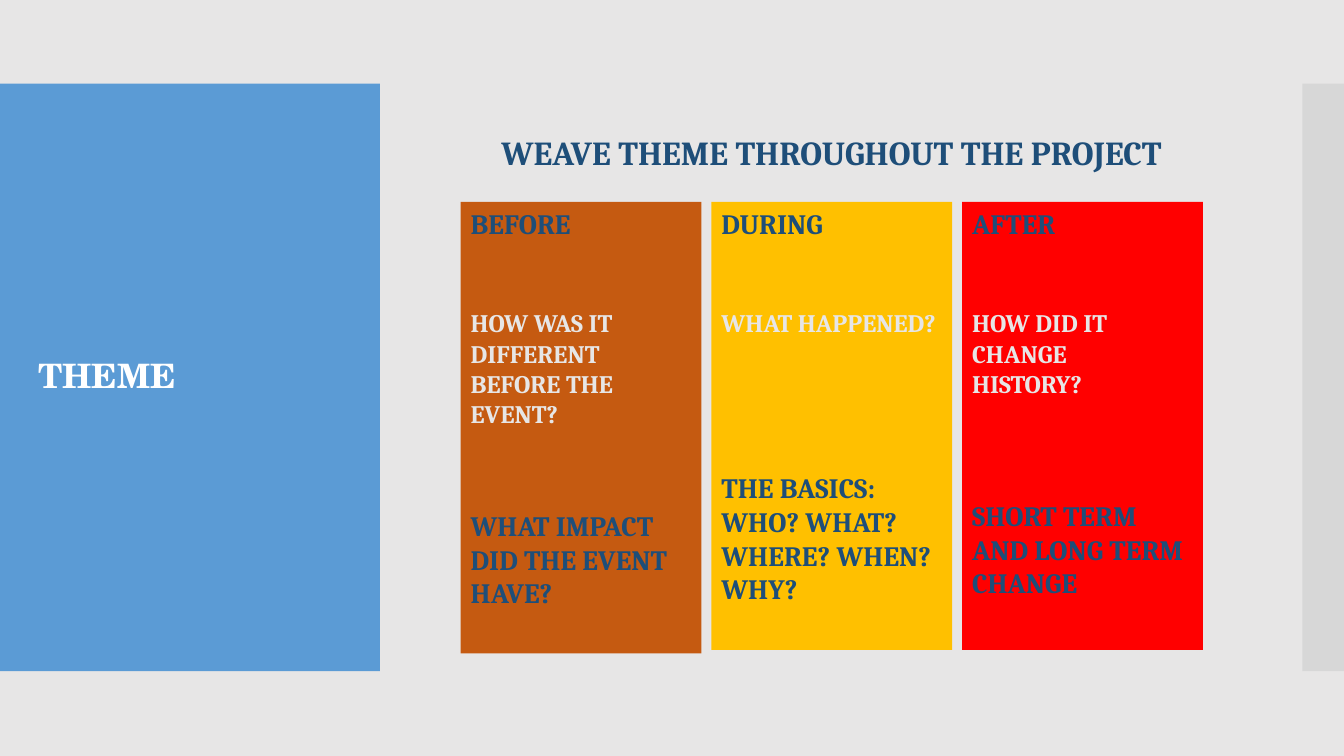
from pptx import Presentation
from pptx.dml.color import RGBColor
from pptx.enum.shapes import MSO_SHAPE as SHAPE
from pptx.enum.text import MSO_ANCHOR as ANCHOR, MSO_AUTO_SIZE as FIT, PP_ALIGN as ALIGN
from pptx.oxml.ns import qn
from pptx.util import Pt
from lxml.etree import SubElement

WHITE = RGBColor(0xFF, 0xFF, 0xFF)
PALE = RGBColor(0xE7, 0xE6, 0xE6)
GRAY = RGBColor(0xC8, 0xC8, 0xC8)
BLUE = RGBColor(0x5B, 0x9B, 0xD5)
NAVY = RGBColor(0x1E, 0x4E, 0x79)
RUST = RGBColor(0xC5, 0x5A, 0x11)
GOLD = RGBColor(0xFF, 0xC0, 0x00)
RED = RGBColor(0xFF, 0x00, 0x00)


def add_box(s, left, top, width, height, color):
    sp = s.shapes.add_shape(SHAPE.RECTANGLE, Pt(left), Pt(top), Pt(width), Pt(height))
    sp.shadow.inherit = False
    sp.fill.solid()
    sp.fill.fore_color.rgb = color
    sp.line.fill.background()
    return sp


def write(p, text, size, color, font="Cambria", align=ALIGN.LEFT, before=0):
    p.alignment = align
    p.space_before = Pt(before)
    r = p.add_run()
    r.text = text
    for name, value in {"name": font, "size": Pt(size), "bold": True}.items():
        setattr(r.font, name, value)
    r.font.color.rgb = color


prs = Presentation()
prs.slide_width, prs.slide_height = Pt(960), Pt(540)
s = prs.slides.add_slide(prs.slide_layouts[5])
s.background.fill.solid()
s.background.fill.fore_color.rgb = PALE

title = s.shapes.title
panel = add_box(s, 0, 59.76, 271.3, 419.76, BLUE)
strip = add_box(s, 930.24, 59.76, 29.76, 419.76, GRAY)
SubElement(strip.fill.fore_color._xFill[0], qn("a:alpha"), val="49000")
for sp in (panel, strip):
    title.element.addprevious(sp.element)

place = {"left": Pt(20), "top": Pt(88.5), "width": Pt(232), "height": Pt(362)}
for name, value in place.items():
    setattr(title, name, value)
tf = title.text_frame
for name, value in {"word_wrap": True, "auto_size": FIT.NONE, "vertical_anchor": ANCHOR.MIDDLE}.items():
    setattr(tf, name, value)
tf.paragraphs[0].line_spacing = 0.9
write(tf.paragraphs[0], "THEME", 24, WHITE, "TeX Gyre Schola")

heading = s.shapes.add_textbox(Pt(314), Pt(90.9), Pt(560), Pt(36))
heading.text_frame.word_wrap = True
write(heading.text_frame.paragraphs[0], "WEAVE THEME THROUGHOUT THE PROJECT", 24, NAVY, align=ALIGN.CENTER)

columns = [
    ("BEFORE", ["HOW WAS IT DIFFERENT BEFORE THE EVENT?"],
     ["WHAT IMPACT DID THE EVENT HAVE?"], RUST, 322.5, 57),
    ("DURING", ["WHAT HAPPENED?"],
     ["THE BASICS:", "WHO? WHAT?", "WHERE? WHEN?", "WHY?"], GOLD, 320, 95),
    ("AFTER", ["HOW DID IT", "CHANGE", "HISTORY?"],
     ["SHORT TERM", "AND LONG TERM", "CHANGE"], RED, 320, 71.5),
]
for i, (label, question, answer, color, height, gap) in enumerate(columns):
    sp = add_box(s, 329.1 + 179.1 * i, 144.2, 172, height, color)
    tf = sp.text_frame
    tf.word_wrap = True
    tf.vertical_anchor = ANCHOR.TOP
    write(tf.paragraphs[0], label, 20, NAVY)
    for lines, size, ink, before in ((question, 18, PALE, 48), (answer, 20, NAVY, gap)):
        for j, text in enumerate(lines):
            write(tf.add_paragraph(), text, size, ink, before=0 if j else before)

prs.save("out.pptx")
